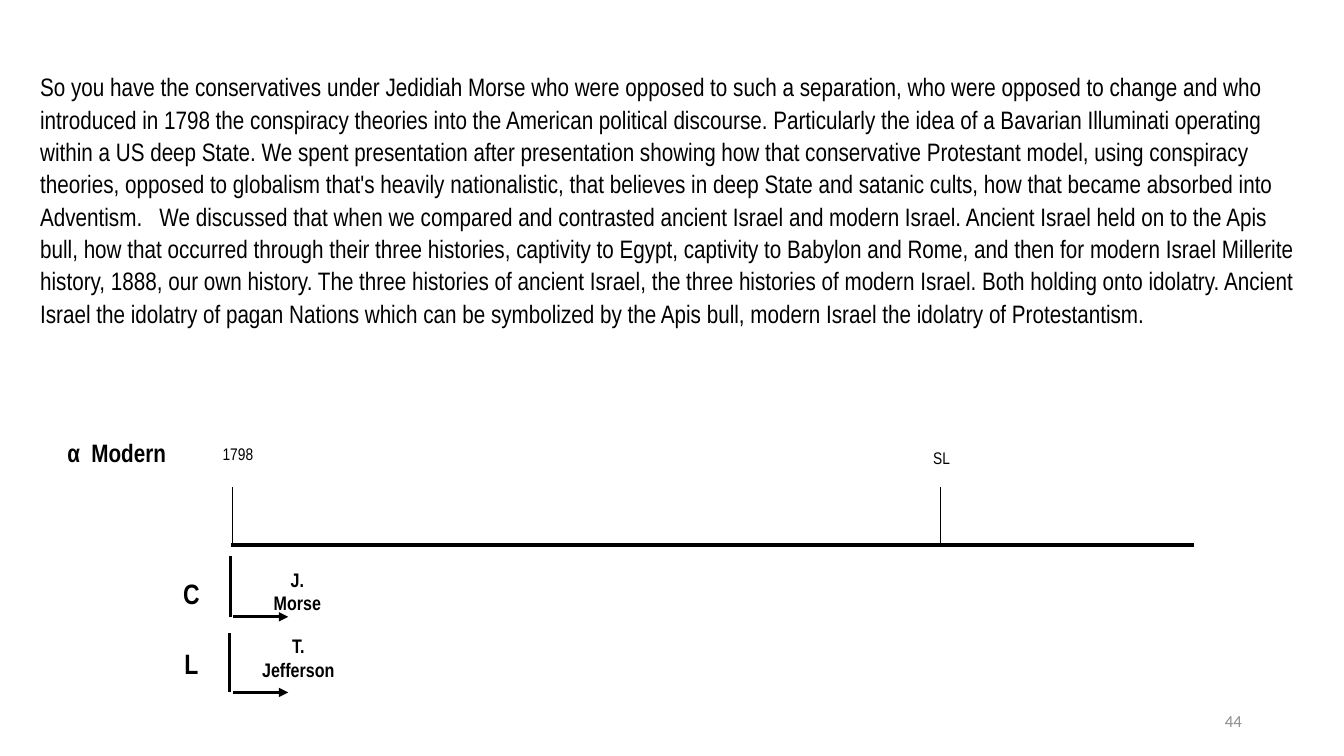
from dataclasses import dataclass

from lxml.etree import SubElement
from pptx import Presentation
from pptx.dml.color import RGBColor
from pptx.enum.shapes import MSO_CONNECTOR
from pptx.enum.text import MSO_ANCHOR, PP_ALIGN
from pptx.oxml.ns import qn
from pptx.slide import Slide
from pptx.util import Pt

BLACK = "000000"
GREY = "8C8C8C"
CONSERVATIVES = (
    "So you have the conservatives under Jedidiah Morse who were opposed to such a separation, "
    "who were opposed to change and who introduced in 1798 the conspiracy theories into the "
    "American political discourse. Particularly the idea of a Bavarian Illuminati operating "
    "within a US deep State. We spent presentation after presentation showing how that "
    "conservative Protestant model, using conspiracy theories, opposed to globalism that's "
    "heavily nationalistic, that believes in deep State and satanic cults, how that became "
    "absorbed into Adventism.   "
)
ISRAEL = (
    "We discussed that when we compared and contrasted ancient "
    "Israel and modern Israel. Ancient Israel held on to the Apis bull, how that occurred "
    "through their three histories, captivity to Egypt, captivity to Babylon and Rome, and then "
    "for modern Israel Millerite history, 1888, our own history. The three histories of ancient "
    "Israel, the three histories of modern Israel. Both holding onto idolatry. Ancient Israel "
    "the idolatry of pagan Nations which can be symbolized by the Apis bull, modern Israel the "
    "idolatry of Protestantism."
)


@dataclass(frozen=True)
class Label:
    text: str
    left: float
    top: float
    width: float
    height: float
    size: float
    bold: bool = False
    align: PP_ALIGN = PP_ALIGN.LEFT
    font: str = "Arial Narrow"
    color: str = BLACK
    anchor: MSO_ANCHOR = MSO_ANCHOR.TOP
    line_spacing: float = 1.0


@dataclass(frozen=True)
class Stroke:
    x1: float
    y1: float
    x2: float
    y2: float
    weight: float
    arrow: bool = False


@dataclass(frozen=True)
class Stream:
    letter: str
    letter_top: float
    leader: str
    leader_left: float
    leader_top: float
    stem_x: float
    stem_top: float
    stem_bottom: float


LABELS = [
    Label("44", 678.24, 500.4, 216, 28.8, 12, align=PP_ALIGN.RIGHT,
          font="Calibri", color=GREY, anchor=MSO_ANCHOR.MIDDLE),
    Label(CONSERVATIVES + ISRAEL, 21.6, 46.1, 915.8, 192.2, 18, line_spacing=1.07),
    Label("1798", 151.9, 313.2, 54, 21.6, 12),
    Label("SL", 659.5, 316.1, 40.3, 21.6, 12),
    Label("α  Modern", 41, 308.9, 103, 28.8, 18, bold=True),
]
TIMELINE_Y = 389.5
TIMELINE = [
    Stroke(164.9, TIMELINE_Y, 853.2, TIMELINE_Y, 3),
    *(Stroke(x, 347.8, x, TIMELINE_Y, 0.75) for x in (166.3, 671.8)),
]
STREAMS = [
    Stream("C", 408.2, "J.\nMorse", 178.6, 401.8, 164.9, 397.4, 440.6),
    Stream("L", 457.9, "T.\nJefferson", 179.3, 449.3, 164.2, 452.2, 494.6),
]


def rgb(color: str) -> RGBColor:
    return RGBColor.from_string(color)


def draw_label(slide: Slide, label: Label) -> None:
    box = slide.shapes.add_textbox(
        Pt(label.left), Pt(label.top), Pt(label.width), Pt(label.height))
    frame = box.text_frame
    frame.word_wrap = True
    frame.vertical_anchor = label.anchor
    frame.text = label.text
    for paragraph in frame.paragraphs:
        paragraph.alignment = label.align
        paragraph.line_spacing = label.line_spacing
        paragraph.font.name = label.font
        paragraph.font.size = Pt(label.size)
        paragraph.font.bold = label.bold
        paragraph.font.color.rgb = rgb(label.color)


def draw_stroke(slide: Slide, stroke: Stroke) -> None:
    connector = slide.shapes.add_connector(
        MSO_CONNECTOR.STRAIGHT,
        Pt(stroke.x1), Pt(stroke.y1), Pt(stroke.x2), Pt(stroke.y2))
    connector.line.color.rgb = rgb(BLACK)
    connector.line.width = Pt(stroke.weight)
    properties = connector._element.spPr
    if stroke.arrow:
        SubElement(properties.find(qn("a:ln")), qn("a:tailEnd"), type="triangle")
    SubElement(properties, qn("a:effectLst"))


def draw_stream(slide: Slide, stream: Stream) -> None:
    draw_stroke(slide, Stroke(stream.stem_x, stream.stem_top,
                              stream.stem_x, stream.stem_bottom, 2.25))
    draw_stroke(slide, Stroke(166.3, stream.stem_bottom,
                              205.9, stream.stem_bottom, 2.25, arrow=True))
    draw_label(slide, Label(stream.letter, 110.9, stream.letter_top, 51.8, 31.7, 20,
                            bold=True, align=PP_ALIGN.CENTER))
    draw_label(slide, Label(stream.leader, stream.leader_left, stream.leader_top,
                            67.7, 41, 14, bold=True, align=PP_ALIGN.CENTER))


def main() -> None:
    presentation = Presentation()
    presentation.slide_width = Pt(960)
    presentation.slide_height = Pt(540)
    slide = presentation.slides.add_slide(presentation.slide_layouts[6])
    for label in LABELS:
        draw_label(slide, label)
    for stroke in TIMELINE:
        draw_stroke(slide, stroke)
    for stream in STREAMS:
        draw_stream(slide, stream)
    presentation.save("out.pptx")


if __name__ == "__main__":
    main()
